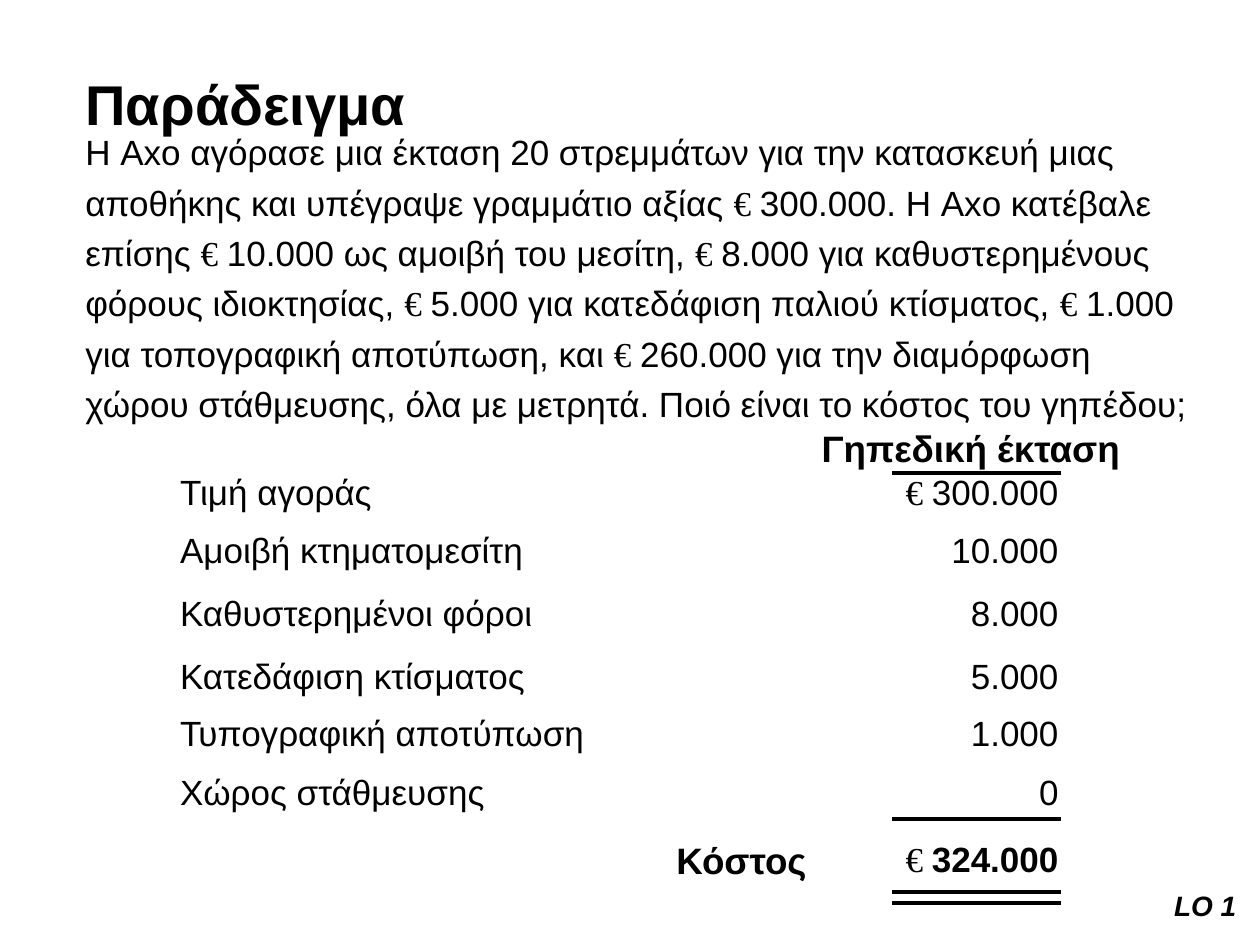
from lxml import etree
from pptx import Presentation
from pptx.dml.color import RGBColor
from pptx.enum import shapes, text
from pptx.oxml import ns
from pptx.util import Cm, Pt

BLACK = RGBColor(0, 0, 0)
LEFT, MID, RIGHT = text.PP_ALIGN.LEFT, text.PP_ALIGN.CENTER, text.PP_ALIGN.RIGHT
EURO = "€ "


def fill(frame, words, size, bold=False, align=LEFT, gap=1.0):
    """Write one paragraph in Arial, with the euro signs in Times New Roman."""
    frame.word_wrap = True
    frame.auto_size = text.MSO_AUTO_SIZE.SHAPE_TO_FIT_TEXT
    frame.vertical_anchor = text.MSO_ANCHOR.TOP
    para = frame.paragraphs[0]
    para.alignment, para.line_spacing = align, gap
    for i, part in enumerate(words.split(EURO)):
        pieces = [(EURO, "Times New Roman", False)] if i else []
        pieces += [(part, "Arial", bold)] if part else []
        for piece, face, heavy in pieces:
            run = para.add_run()
            run.text = piece
            run.font.name, run.font.size, run.font.bold = face, Pt(size), heavy
            run.font.color.rgb = BLACK
    return para


def box(x, y, w, h, words, size=20, **style):
    area = slide.shapes.add_textbox(Cm(x), Cm(y), Cm(w), Cm(h))
    return fill(area.text_frame, words, size, **style)


deck = Presentation()
deck.slide_width, deck.slide_height = Cm(25.4), Cm(19.05)
slide = deck.slides.add_slide(deck.slide_layouts[5])

title = slide.shapes.title
title.left, title.top, title.width, title.height = Cm(1.47), Cm(1.27), Cm(23.06), Cm(1.6)
fill(title.text_frame, "Παράδειγμα", 32, bold=True)

box(1.47, 2.34, 22.86, 6.35,
    "Η Axo αγόρασε μια έκταση 20 στρεμμάτων για την κατασκευή μιας αποθήκης "
    "και υπέγραψε γραμμάτιο αξίας € 300.000. Η Axo κατέβαλε επίσης € 10.000 "
    "ως αμοιβή του μεσίτη, € 8.000 για καθυστερημένους φόρους ιδιοκτησίας, "
    "€ 5.000 για κατεδάφιση παλιού κτίσματος, € 1.000 για τοπογραφική "
    "αποτύπωση, και € 260.000 για την διαμόρφωση χώρου στάθμευσης, όλα με "
    "μετρητά. Ποιό είναι το κόστος του γηπέδου;", gap=1.2)

# Cost list
box(16.08, 8.46, 6.98, 1.07, "Γηπεδική έκταση", 21, bold=True, align=MID)
costs = [
    (9.32, "Τιμή αγοράς", "€ 300.000"),
    (10.49, "Αμοιβή κτηματομεσίτη", "10.000"),
    (11.76, "Καθυστερημένοι φόροι", "8.000"),
    (13.03, "Κατεδάφιση κτίσματος", "5.000"),
    (14.17, "Τυπογραφική αποτύπωση", "1.000"),
    (15.36, "Χώρος στάθμευσης", "0"),
]
for top, label, cost in costs:
    box(3.38, top, 12.27, 1.14, label, gap=1.05)
    box(17.37, top, 4.22, 1.14, cost, align=RIGHT, gap=1.05)

box(11.23, 16.71, 5.28, 1.19, "Κόστος", 21, bold=True, align=RIGHT, gap=1.05)
box(17.58, 16.71, 4.01, 1.14, "€ 324.000", bold=True, align=RIGHT, gap=1.05)

# Rules under the heading, the costs and the total
for y in (9.53, 16.51, 17.99, 18.21):
    rule = slide.shapes.add_connector(
        shapes.MSO_CONNECTOR.STRAIGHT, Cm(17.98), Cm(y), Cm(21.39), Cm(y))
    rule.line.color.rgb, rule.line.width = BLACK, Pt(2.25)
    etree.SubElement(rule._element.spPr, ns.qn("a:effectLst"))

goal = box(23.06, 17.78, 2.11, 0.94, "LO 1", 16, bold=True, align=RIGHT)
goal.runs[0].font.italic = True

deck.save("out.pptx")
